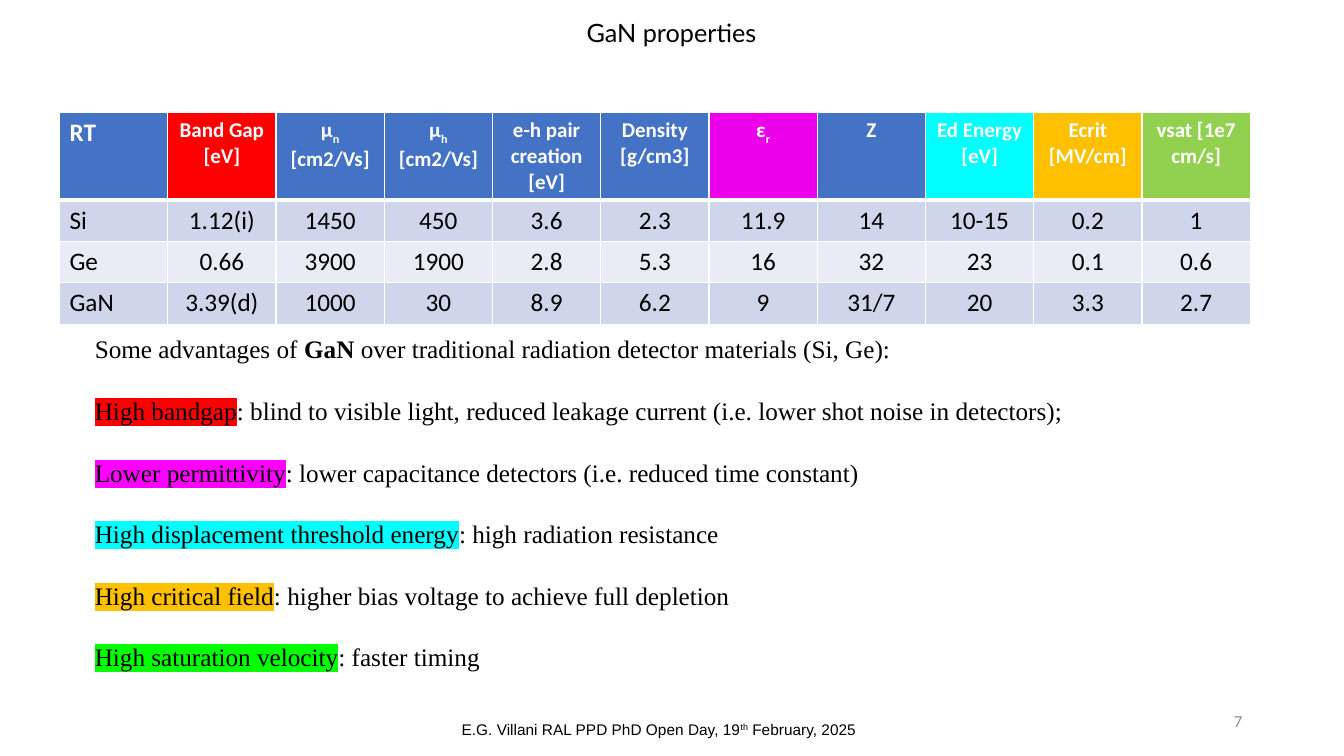
from lxml import etree
from pptx import Presentation
from pptx.dml.color import RGBColor
from pptx.enum.text import MSO_ANCHOR, MSO_AUTO_SIZE, PP_ALIGN
from pptx.oxml.ns import qn
from pptx.util import Inches, Pt

LEFT, CENTER, RIGHT, JUSTIFY = PP_ALIGN.LEFT, PP_ALIGN.CENTER, PP_ALIGN.RIGHT, PP_ALIGN.JUSTIFY
TOP, MIDDLE = MSO_ANCHOR.TOP, MSO_ANCHOR.MIDDLE
NO_AUTOFIT = MSO_AUTO_SIZE.NONE

# The slide is laid out on a grid of tenths of an inch
GRID = Inches(0.1)
SLIDE_COLS, SLIDE_ROWS = 133.3, 75
TABLE_LEFT, TABLE_TOP, TABLE_WIDTH = 5.9, 11.2, 118.1
HEADER_HEIGHT, ROW_HEIGHT = 8.4, 4.1

COLORS = {
    "black": "000000", "white": "FFFFFF", "grey": "8C8C8C",
    "header": "4472C4", "band_dark": "CFD5EA", "band_light": "E9EBF5",
    "red": "FF0000", "violet": "EC00EC", "magenta": "FF00FF", "cyan": "00FFFF",
    "amber": "FFC000", "leaf": "92D050", "green": "00FF00",
}

# Run styles: baseline shift in thousandths of a percent
BASELINES = {"sub": "-25000", "super": "30000"}

# Column headings: paragraphs of (text, style) runs, and the cell colour
HEADINGS = [
    ([[("RT", None)]], "header"),
    ([[("Band Gap [eV]", None)]], "red"),
    ([[("µ", None), ("n", "sub"), (" [cm2/Vs]", None)]], "header"),
    ([[("µ", None), ("h", "sub")], [("[cm2/Vs]", None)]], "header"),
    ([[("e-h pair creation [eV]", None)]], "header"),
    ([[("Density [g/cm3]", None)]], "header"),
    ([[("ε", None), ("r", "sub")]], "violet"),
    ([[("Z", None)]], "header"),
    ([[("Ed Energy [eV]", None)]], "cyan"),
    ([[("Ecrit [MV/cm]", None)]], "amber"),
    ([[("vsat [1e7 cm/s]", None)]], "leaf"),
]
MATERIALS = [
    ["Si", "1.12(i)", "1450", "450", "3.6", "2.3", "11.9", "14", "10-15", "0.2", "1"],
    ["Ge", "0.66", "3900", "1900", "2.8", "5.3", "16", "32", "23", "0.1", "0.6"],
    ["GaN", "3.39(d)", "1000", "30", "8.9", "6.2", "9", "31/7", "20", "3.3", "2.7"],
]
ADVANTAGES = [
    [("Some advantages of ", None), ("GaN", "bold"),
     (" over traditional radiation detector materials (Si, Ge):", None)],
    [("High bandgap", "red"),
     (": blind to visible light, reduced leakage current (i.e. lower shot noise in detectors);", None)],
    [("Lower permittivity", "magenta"),
     (": lower capacitance detectors (i.e. reduced time constant)", None)],
    [("High displacement threshold energy", "cyan"), (": high radiation resistance", None)],
    [("High critical field", "amber"),
     (": higher bias voltage to achieve full depletion", None)],
    [("High saturation velocity", "green"), (": faster timing", None)],
]
FOOTER = [("E.G. Villani RAL PPD PhD Open Day, 19", None), ("th", "super"),
          (" February, 2025", None)]


def cells(count):
    """Length of a number of grid cells."""
    return int(count * GRID)


def rgb(name):
    return RGBColor.from_string(COLORS[name])


def add_color(parent, tag, name):
    holder = etree.SubElement(parent, qn(tag))
    etree.SubElement(holder, qn("a:srgbClr")).set("val", COLORS[name])


def add_run(paragraph, text, style):
    run = paragraph.add_run()
    run.text = text
    if style == "bold":
        run.font.bold = True
    elif style in BASELINES:
        run._r.get_or_add_rPr().set("baseline", BASELINES[style])
    elif style:
        add_color(run._r.get_or_add_rPr(), "a:highlight", style)


def write(frame, paragraphs, size, font, color, align, bold=False, gap=0):
    """Fill a text frame with unbulleted paragraphs, gap points apart."""
    for index, runs in enumerate(paragraphs):
        paragraph = frame.add_paragraph() if index else frame.paragraphs[0]
        properties = paragraph._p.get_or_add_pPr()
        properties.set("marL", "0")
        properties.set("indent", "0")
        etree.SubElement(properties, qn("a:buNone"))
        paragraph.alignment = align
        paragraph.space_before = Pt(gap if index else 0)
        paragraph.font.size = Pt(size)
        paragraph.font.name = font
        paragraph.font.bold = bold
        paragraph.font.color.rgb = rgb(color)
        for text, style in runs:
            add_run(paragraph, text, style)


def place(shape, left, top, width, height, anchor=TOP):
    """Move a text shape on the grid and return its text frame."""
    shape.left, shape.top = cells(left), cells(top)
    shape.width, shape.height = cells(width), cells(height)
    frame = shape.text_frame
    frame.word_wrap = True
    frame.auto_size = NO_AUTOFIT
    frame.vertical_anchor = anchor
    return frame


def add_label(slide, *position, anchor=TOP):
    return place(slide.shapes.add_textbox(0, 0, 0, 0), *position, anchor=anchor)


def paint_cell(cell, fill, bottom_width):
    """White borders first, then the fill, as the schema orders them."""
    properties = cell._tc.get_or_add_tcPr()
    for side, width in zip("LRTB", (1, 1, 1, bottom_width)):
        border = etree.SubElement(properties, qn(f"a:ln{side}"), w=str(Pt(width)))
        add_color(border, "a:solidFill", "white")
    cell.fill.solid()
    cell.fill.fore_color.rgb = rgb(fill)


def add_properties_table(slide):
    row_count = len(MATERIALS) + 1
    table = slide.shapes.add_table(
        row_count, len(HEADINGS), cells(TABLE_LEFT), cells(TABLE_TOP), cells(TABLE_WIDTH),
        cells(HEADER_HEIGHT + ROW_HEIGHT * len(MATERIALS))).table
    for index, row in enumerate(table.rows):
        row.height = cells(ROW_HEIGHT if index else HEADER_HEIGHT)
    for col, (heading, fill) in enumerate(HEADINGS):
        align = CENTER if col else LEFT
        # Heading
        cell = table.cell(0, col)
        paint_cell(cell, fill, 3)
        write(cell.text_frame, heading, 15 if col else 18, "Calibri", "white", align, bold=True)
        # Values of each material
        for row, values in enumerate(MATERIALS, start=1):
            cell = table.cell(row, col)
            paint_cell(cell, "band_dark" if row % 2 else "band_light", 1)
            write(cell.text_frame, [[(values[col], None)]], 18, "Calibri", "black", align)


def main():
    deck = Presentation()
    deck.slide_width, deck.slide_height = cells(SLIDE_COLS), cells(SLIDE_ROWS)
    slide = deck.slides.add_slide(deck.slide_layouts[1])

    # Title
    title = place(slide.shapes.title, 3.6, 1.2, 126, 4)
    write(title, [[("GaN properties", None)]], 18, "Lato", "black", CENTER)

    # Material comparison
    add_properties_table(slide)

    # Advantages of GaN
    advantages = place(slide.placeholders[1], 8.4, 32.6, 116.6, 34.3)
    write(advantages, ADVANTAGES, 18, "Times New Roman", "black", JUSTIFY, gap=22.4)

    # Footer and page number
    footer = add_label(slide, 31.5, 70.9, 67.7, 4)
    write(footer, [FOOTER], 11, "Arial", "black", CENTER)
    page_number = add_label(slide, 94.2, 69.5, 30, 4, anchor=MIDDLE)
    write(page_number, [[("7", None)]], 12, "Calibri", "grey", RIGHT)

    deck.save("out.pptx")


if __name__ == "__main__":
    main()
